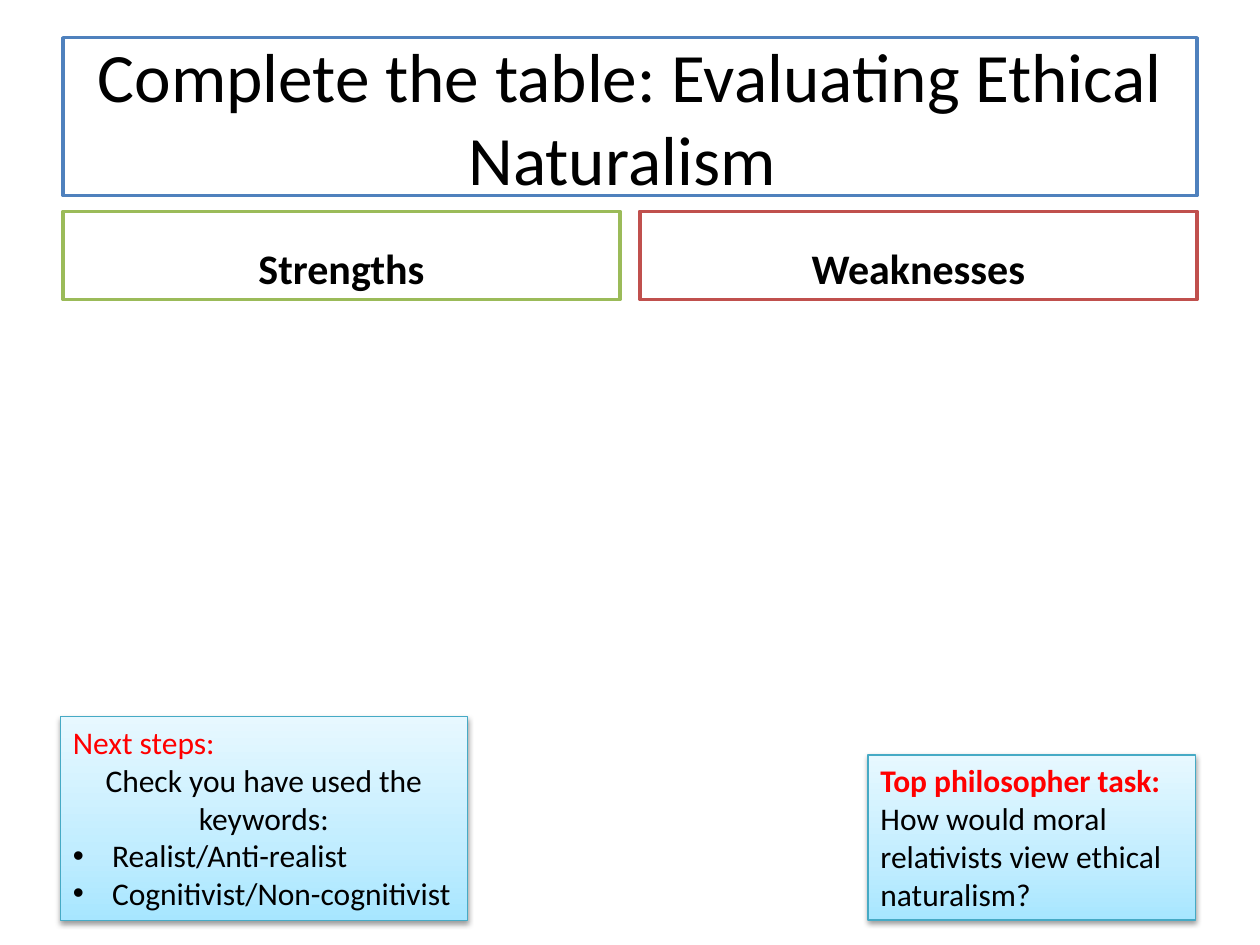
"""Build the slide on evaluating ethical naturalism."""
from copy import deepcopy

from lxml import etree
from pptx import Presentation
from pptx.dml.color import RGBColor
from pptx.enum.text import MSO_ANCHOR, MSO_AUTO_SIZE, PP_ALIGN
from pptx.oxml.ns import qn
from pptx.util import Cm, Pt

LEFT, MID = PP_ALIGN.LEFT, PP_ALIGN.CENTER
TOP, CENTRE, BASE = MSO_ANCHOR.TOP, MSO_ANCHOR.MIDDLE, MSO_ANCHOR.BOTTOM
FIXED = MSO_AUTO_SIZE.NONE

WHITE = RGBColor(0xFF, 0xFF, 0xFF)
BLACK = RGBColor(0, 0, 0)
RED = RGBColor(0xFF, 0, 0)
BLUE = RGBColor(0x4F, 0x81, 0xBD)
GREEN = RGBColor(0x9B, 0xBB, 0x59)
BRICK = RGBColor(0xC0, 0x50, 0x4D)
TEAL = RGBColor(0x46, 0xAA, 0xC5)
FADE = [(0, RGBColor(0xA7, 0xE6, 0xFF)),
        (0.35, RGBColor(0xC1, 0xED, 0xFF)),
        (1, RGBColor(0xE7, 0xF8, 0xFF))]


class Deck:
    """Hold the style and the current slide."""

    def __init__(self, font):
        self.font = font
        self.file = Presentation()
        self.file.slide_width, self.file.slide_height = Cm(25.4), Cm(19.05)
        self.slide = self.file.slides.add_slide(self.file.slide_layouts[5])

    def frame(self, shape, box, edge, width, anchor):
        """Place a shape and set its outline and text frame."""
        for name, size in zip(("left", "top", "width", "height"), box):
            setattr(shape, name, Cm(size))
        shape.line.color.rgb = edge
        shape.line.width = Pt(width)
        text = shape.text_frame
        looks = {"word_wrap": True, "auto_size": FIXED, "vertical_anchor": anchor}
        for name, value in looks.items():
            setattr(text, name, value)
        return text

    def label(self, para, words, size, color, bold=False, align=LEFT):
        """Fill a paragraph with one formatted run."""
        para.alignment = align
        run = para.add_run()
        run.text = words
        looks = {"name": self.font, "size": Pt(size), "bold": bold}
        for name, value in looks.items():
            setattr(run.font, name, value)
        run.font.color.rgb = color

    def panel(self, shape, box, edge, anchor, words, size, bold):
        """Make a white outlined panel with one centred line of text."""
        text = self.frame(shape, box, edge, 2, anchor)
        shape.fill.solid()
        shape.fill.fore_color.rgb = WHITE
        self.label(text.paragraphs[0], words, size, BLACK, bold, MID)

    def title(self, box, words):
        """Format the title placeholder."""
        self.panel(self.slide.shapes.title, box, BLUE, CENTRE, words, 39.6, False)

    def head(self, box, edge, words):
        """Add a column heading."""
        shape = self.slide.shapes.add_textbox(0, 0, 0, 0)
        self.panel(shape, box, edge, BASE, words, 24, True)

    def note(self, box, lines):
        """Add a shaded note from (words, color, bold, align, bullet) lines."""
        shape = self.slide.shapes.add_textbox(0, 0, 0, 0)
        text = self.frame(shape, box, TEAL, 0.75, TOP)
        self.shade(shape)
        for i, (words, color, bold, align, dot) in enumerate(lines):
            para = text.add_paragraph() if i else text.paragraphs[0]
            self.label(para, words, 18, color, bold, align)
            if dot:
                self.bullet(para)

    def shade(self, shape):
        """Give a shape the blue fade and a soft shadow."""
        fill = shape.fill
        fill.gradient()
        fill.gradient_angle = 90
        stops = shape.element.spPr.find(".//" + qn("a:gsLst"))
        stops.append(deepcopy(stops[0]))
        for stop, (place, color) in zip(fill.gradient_stops, FADE):
            stop.position = place
            stop.color.rgb = color
        shape.shadow.inherit = False
        effects = shape.element.spPr.find(qn("a:effectLst"))
        cast = etree.SubElement(effects, qn("a:outerShdw"), blurRad=str(Pt(3.1)),
                                dist=str(Pt(1.6)), dir="5400000", rotWithShape="0")
        tone = etree.SubElement(cast, qn("a:srgbClr"), val=str(BLACK))
        etree.SubElement(tone, qn("a:alpha"), val="38000")

    def bullet(self, para):
        """Give a paragraph a hanging bullet."""
        props = para._p.get_or_add_pPr()
        props.set("marL", str(Cm(0.79)))
        props.set("indent", str(Cm(-0.79)))
        etree.SubElement(props, qn("a:buFont"), typeface="Arial")
        etree.SubElement(props, qn("a:buChar"), char="•")


def main():
    """Draw the slide and save it."""
    deck = Deck("Calibri")
    deck.title((1.27, 0.76, 22.86, 3.18),
               "Complete the table: Evaluating Ethical Naturalism ")
    for i, (words, edge) in enumerate([("Strengths", GREEN), ("Weaknesses", BRICK)]):
        deck.head((1.27 + 11.63 * i, 4.26, 11.23, 1.78), edge, words)
    deck.note((17.5, 15.22, 6.6, 3.33), [
        ("Top philosopher task:", RED, True, LEFT, False),
        ("How would moral relativists view ethical naturalism?",
         BLACK, False, LEFT, False)])
    deck.note((1.22, 14.45, 8.2, 4.11), [
        ("Next steps:", RED, False, LEFT, False),
        ("Check you have used the keywords:", BLACK, False, MID, False),
        ("Realist/Anti-realist", BLACK, False, LEFT, True),
        ("Cognitivist/Non-cognitivist", BLACK, False, LEFT, True)])
    deck.file.save("out.pptx")


if __name__ == "__main__":
    main()
